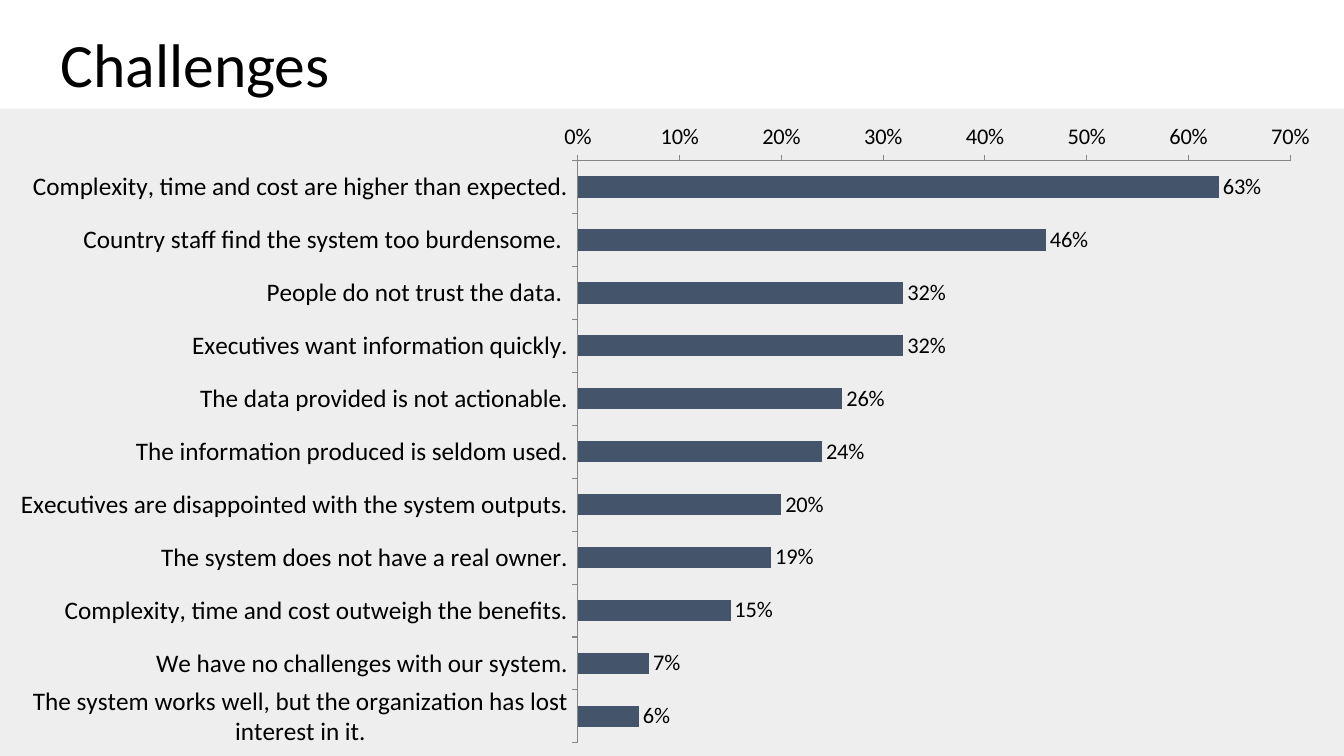
"""Build the Challenges slide: a title above a horizontal bar chart."""
from pptx import Presentation
from pptx.chart.data import CategoryChartData
from pptx.dml.color import RGBColor
from pptx.enum.chart import XL_CHART_TYPE, XL_LABEL_POSITION, XL_TICK_MARK
from pptx.enum.text import MSO_ANCHOR, PP_ALIGN
from pptx.oxml import parse_xml
from pptx.oxml.ns import nsdecls, qn
from pptx.util import Inches, Pt

BAR = XL_CHART_TYPE.BAR_CLUSTERED
OUTSIDE_END = XL_LABEL_POSITION.OUTSIDE_END
TICK_OUT = XL_TICK_MARK.OUTSIDE
MIDDLE = MSO_ANCHOR.MIDDLE
LEFT = PP_ALIGN.LEFT

TITLE = "Challenges"
CHALLENGES = [
    ("Complexity, time and cost are higher than expected.", 0.63),
    ("Country staff find the system too burdensome. ", 0.46),
    ("People do not trust the data. ", 0.32),
    ("Executives want information quickly.", 0.32),
    ("The data provided is not actionable.", 0.26),
    ("The information produced is seldom used.", 0.24),
    ("Executives are disappointed with the system outputs.", 0.20),
    ("The system does not have a real owner.", 0.19),
    ("Complexity, time and cost outweigh the benefits.", 0.15),
    ("We have no challenges with our system.", 0.07),
    ("The system works well, but the organization has lost interest in it.", 0.06),
]
COLORS = {"text": "000000", "bar": "44546A", "back": "EEEEEE", "axis": "868686"}
FONT = "Calibri"
PLOT = {"x": 0.43, "y": 0.08, "w": 0.53, "h": 0.9}


def rgb(name):
    return RGBColor.from_string(COLORS[name])


def set_font(font, size):
    font.name = FONT
    font.size = Pt(size)
    font.color.rgb = rgb("text")


def back_fill():
    return parse_xml(
        f'<c:spPr {nsdecls("c", "a")}><a:solidFill><a:srgbClr val="{COLORS["back"]}"/>'
        "</a:solidFill><a:ln><a:noFill/></a:ln></c:spPr>"
    )


def place_plot(plot_area):
    for old in plot_area.findall(qn("c:layout")):
        plot_area.remove(old)
    sizes = "".join(f'<c:{k} val="{v}"/>' for k, v in PLOT.items())
    plot_area.insert(0, parse_xml(
        f'<c:layout {nsdecls("c")}><c:manualLayout><c:layoutTarget val="inner"/>'
        f'<c:xMode val="edge"/><c:yMode val="edge"/>{sizes}</c:manualLayout></c:layout>'
    ))
    plot_area.append(back_fill())


def add_title(s):
    title = s.shapes.title
    title.left, title.top = Inches(0.5), Inches(0.21)
    title.width, title.height = Inches(11.5), Inches(0.92)
    tf = title.text_frame
    tf.text = TITLE
    tf.vertical_anchor = MIDDLE
    p = tf.paragraphs[0]
    p.alignment = LEFT
    p.line_spacing = 0.9
    set_font(p.font, 44)


def add_bars(s):
    data = CategoryChartData(number_format="0%")
    data.categories = [label for label, _ in CHALLENGES]
    data.add_series("Series 1", [share for _, share in CHALLENGES])
    chart = s.shapes.add_chart(
        BAR, Inches(0), Inches(1.08), Inches(13.33), Inches(6.42), data
    ).chart
    chart.has_legend = False
    chart.has_title = False
    set_font(chart.font, 16)

    cat, val = chart.category_axis, chart.value_axis
    for axis, size in ((cat, 18), (val, 16)):
        axis.has_major_gridlines = False
        axis.major_tick_mark = TICK_OUT
        axis.format.line.color.rgb = rgb("axis")
        axis.format.line.width = Pt(0.75)
        set_font(axis.tick_labels.font, size)
    cat.reverse_order = True
    val.minimum_scale, val.maximum_scale, val.major_unit = 0, 0.7, 0.1
    val.tick_labels.number_format = "0%"
    val.tick_labels.number_format_is_linked = False

    plot = chart.plots[0]
    plot.gap_width = 150
    plot.vary_by_categories = False
    fill = plot.series[0].format.fill
    fill.solid()
    fill.fore_color.rgb = rgb("bar")
    plot.has_data_labels = True
    labels = plot.data_labels
    labels.show_value = True
    labels.number_format = "0%"
    labels.number_format_is_linked = False
    labels.position = OUTSIDE_END
    set_font(labels.font, 16)

    chart_part = chart.element.find(qn("c:chart"))
    chart_part.addnext(back_fill())
    place_plot(chart_part.find(qn("c:plotArea")))


def main():
    prs = Presentation()
    prs.slide_width, prs.slide_height = Inches(13.33), Inches(7.5)
    s = prs.slides.add_slide(prs.slide_layouts[5])
    add_title(s)
    add_bars(s)
    prs.save("out.pptx")


if __name__ == "__main__":
    main()
